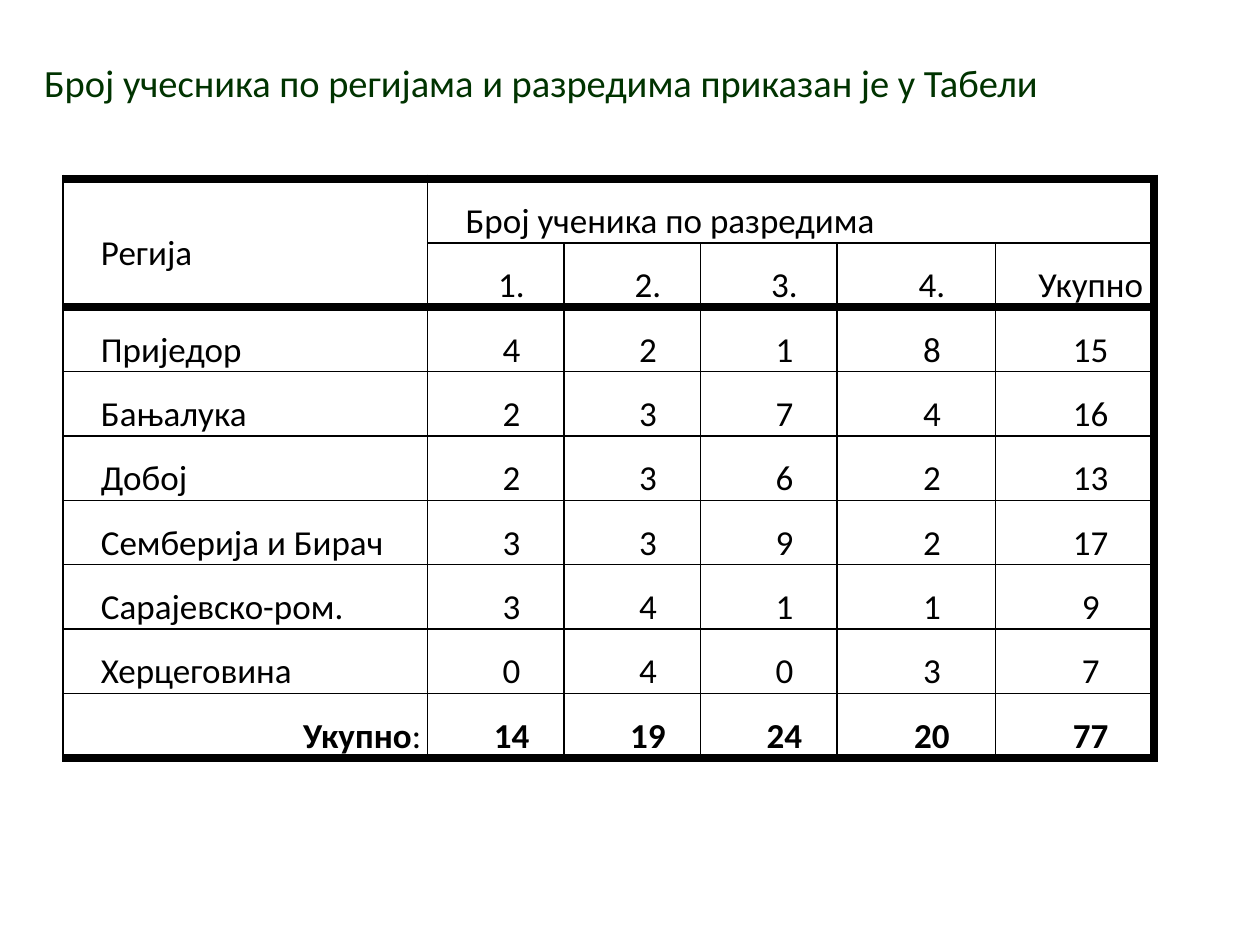
from lxml.etree import SubElement
from pptx import Presentation
from pptx.dml.color import RGBColor
from pptx.enum.text import MSO_ANCHOR, PP_ALIGN
from pptx.oxml.ns import qn
from pptx.util import Cm, Pt

COLORS = {"title": "003300", "text": "000000", "border": "000000"}
FONT = "Calibri"
THIN, THICK = Pt(1), Pt(5.25)
COLUMN_WIDTHS = [7.35, 2.75, 2.75, 2.75, 3.2, 3.2]
TITLE = "Број учесника по регијама и разредима приказан је у Табели"
HEADER_ROWS = [
    ["Регија", "Број ученика по разредима", "", "", "", ""],
    ["", "1.", "2.", "3.", "4.", "Укупно"],
]
REGION_ROWS = [
    ["Приједор", 4, 2, 1, 8, 15],
    ["Бањалука", 2, 3, 7, 4, 16],
    ["Добој", 2, 3, 6, 2, 13],
    ["Семберија и Бирач", 3, 3, 9, 2, 17],
    ["Сарајевско-ром.", 3, 4, 1, 1, 9],
    ["Херцеговина", 0, 4, 0, 3, 7],
]
TOTAL_ROW = ["Укупно", 14, 19, 24, 20, 77]


def add_run(paragraph, text, size, color, bold=False):
    run = paragraph.add_run()
    run.text = text
    run.font.name = FONT
    run.font.size = Pt(size)
    run.font.bold = bold
    run.font.color.rgb = RGBColor.from_string(COLORS[color])


def add_title(slide, left, top, width, height):
    text_frame = slide.shapes.add_textbox(left, top, width, height).text_frame
    text_frame.word_wrap = True
    add_run(text_frame.paragraphs[0], TITLE, 22, "title")


def set_borders(cell, widths):
    properties = cell._tc.get_or_add_tcPr()
    for position, (side, width) in enumerate(widths.items()):
        line = SubElement(properties, qn(f"a:ln{side}"), w=str(width))
        fill = SubElement(line, qn("a:solidFill"))
        SubElement(fill, qn("a:srgbClr"), val=COLORS["border"])
        properties.insert(position, line)


def format_cell(cell, row, column, last_row, last_column):
    cell.fill.background()
    cell.margin_left = cell.margin_right = Cm(0.13)
    cell.margin_top = cell.margin_bottom = 0
    bottom_row = row + cell.span_height - 1 if cell.is_merge_origin else row
    right_column = column + cell.span_width - 1 if cell.is_merge_origin else column
    first_region_row = len(HEADER_ROWS)
    set_borders(cell, {
        "L": THIN,
        "R": THICK if right_column == last_column else THIN,
        "T": THICK if row in (0, first_region_row) else THIN,
        "B": THICK if bottom_row in (first_region_row - 1, last_row) else THIN,
    })


def fill_cell(cell, text, alignment, bold):
    paragraph = cell.text_frame.paragraphs[0]
    paragraph.alignment = alignment
    paragraph.line_spacing = 1.5
    properties = paragraph._p.get_or_add_pPr()
    properties.set("marL", str(Cm(1.27)))
    properties.set("indent", str(-Cm(0.635)))
    add_run(paragraph, text, 20, "text", bold)
    return paragraph


def add_participants_table(slide, left, top, width, height):
    rows = HEADER_ROWS + REGION_ROWS + [TOTAL_ROW]
    last_row, last_column = len(rows) - 1, len(COLUMN_WIDTHS) - 1
    table = slide.shapes.add_table(len(rows), len(COLUMN_WIDTHS), left, top, width, height).table
    table.first_row = table.horz_banding = False
    for column, share in zip(table.columns, COLUMN_WIDTHS):
        column.width = int(width * share / sum(COLUMN_WIDTHS))
    table.cell(0, 0).merge(table.cell(1, 0))
    table.cell(0, 1).merge(table.cell(0, last_column))
    table.cell(0, 0).vertical_anchor = MSO_ANCHOR.MIDDLE
    for row, values in enumerate(rows):
        for column, value in enumerate(values):
            cell = table.cell(row, column)
            format_cell(cell, row, column, last_row, last_column)
            if cell.is_spanned:
                continue
            alignment = PP_ALIGN.LEFT if column == 0 or row == 0 else PP_ALIGN.CENTER
            if row == last_row and column == 0:
                alignment = PP_ALIGN.RIGHT
            paragraph = fill_cell(cell, str(value), alignment, row == last_row)
            if row == last_row and column == 0:
                add_run(paragraph, ":", 20, "text")


def main():
    presentation = Presentation()
    presentation.slide_width = Cm(25.4)
    presentation.slide_height = Cm(19.05)
    slide = presentation.slides.add_slide(presentation.slide_layouts[6])
    add_participants_table(slide, Cm(1.27), Cm(3.6), Cm(22), Cm(11.43))
    add_title(slide, Cm(0.64), Cm(1.06), Cm(22), Cm(1.2))
    presentation.save("out.pptx")


if __name__ == "__main__":
    main()
